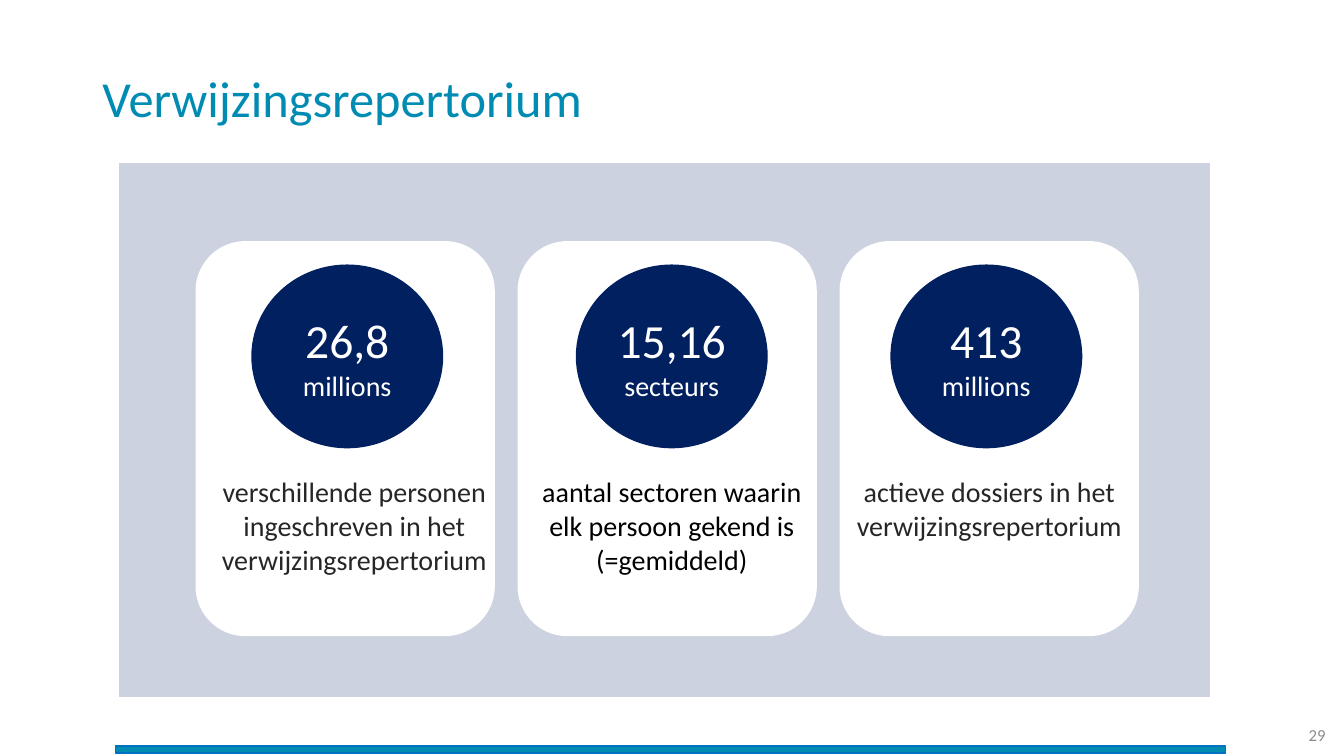
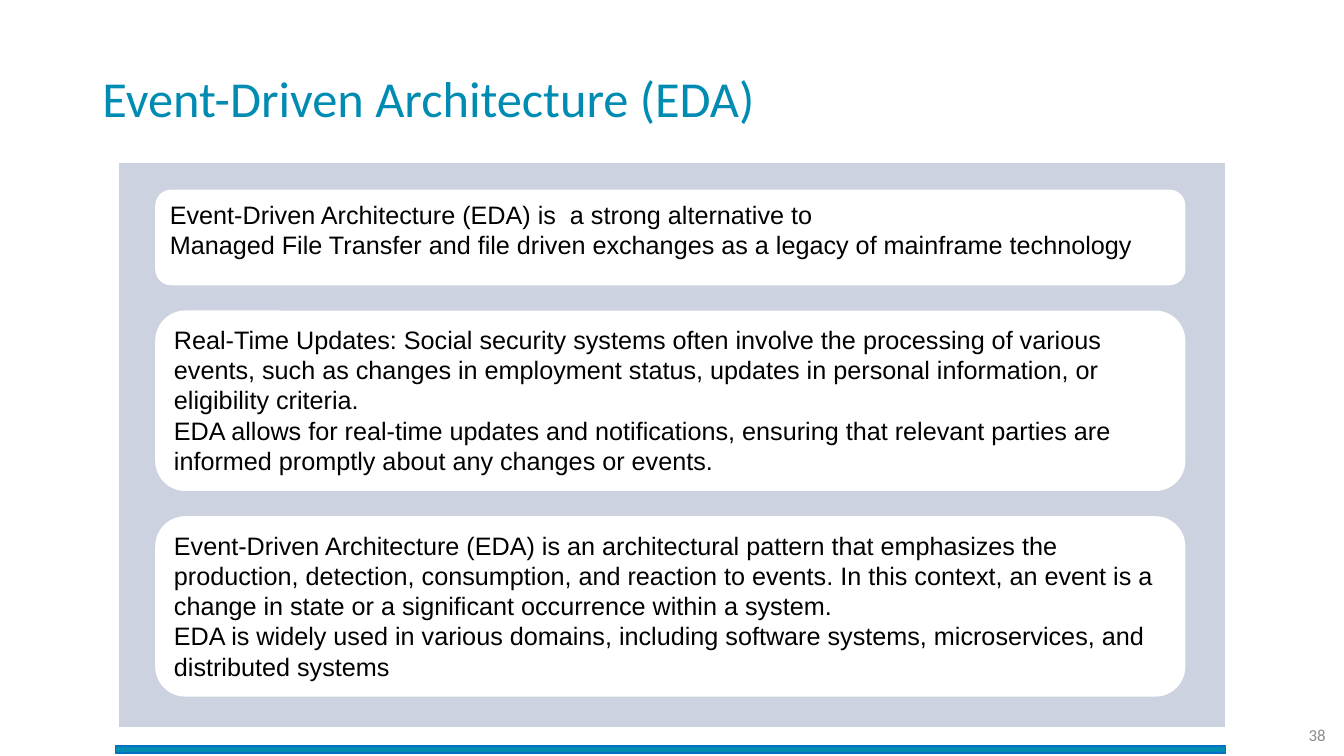
"""Build two slides: repertory key figures and event-driven architecture."""
from dataclasses import dataclass
from itertools import cycle

from lxml.etree import SubElement
from pptx import Presentation
from pptx.dml.color import RGBColor
from pptx.enum.shapes import MSO_SHAPE as Preset
from pptx.enum.text import MSO_ANCHOR as Anchor, MSO_AUTO_SIZE as AutoSize, PP_ALIGN as Align
from pptx.oxml.ns import qn
from pptx.util import Pt

FIGURES_TITLE = "Verwijzingsrepertorium"
FIGURES = [
    {"value": "26,8", "unit": "millions", "circle_left": 180, "color": "262626",
     "caption": "verschillende personen ingeschreven in het verwijzingsrepertorium"},
    {"value": "15,16", "unit": "secteurs", "circle_left": 411.8, "color": "000000",
     "caption": "aantal sectoren waarin elk persoon gekend is (=gemiddeld)"},
    {"value": "413", "unit": "millions", "circle_left": 636.5, "color": "262626",
     "caption": "actieve dossiers in het verwijzingsrepertorium"},
]

EVENTS_TITLE = "Event-Driven Architecture (EDA)"
EVENT_BOXES = [
    (68.4, ["Event-Driven Architecture (EDA) is  a strong alternative to",
            "Managed File Transfer and file driven exchanges as a legacy of mainframe technology"]),
    (128.9, ["Real-Time Updates: Social security systems often involve the processing of various "
             "events, such as changes in employment status, updates in personal information, or "
             "eligibility criteria.",
             "EDA allows for real-time updates and notifications, ensuring that relevant parties "
             "are informed promptly about any changes or events."]),
    (128.9, ["Event-Driven Architecture (EDA) is an architectural pattern that emphasizes the "
             "production, detection, consumption, and reaction to events. In this context, an "
             "event is a change in state or a significant occurrence within a system.",
             "EDA is widely used in various domains, including software systems, microservices, "
             "and distributed systems"]),
]


@dataclass(frozen=True)
class Theme:
    """Colours, fonts and type sizes of the deck."""
    teal: str = "008CB2"
    blue: str = "0070C0"
    navy: str = "002060"
    white: str = "FFFFFF"
    black: str = "000000"
    gray: str = "8C8C8C"
    font: str = "Calibri"
    body_font: str = "Arial"
    title_size: float = 36
    value_size: float = 34
    caption_size: float = 20
    body_size: float = 18
    number_size: float = 12


THEME = Theme()
NO_GRID_STYLE = "{2D5ABB26-0587-4C30-8999-92F81FD0307C}"


def points(*lengths):
    """Convert numbers to lengths in points."""
    return [Pt(length) for length in lengths]


def write(frame, *lines, sizes, color, font=THEME.font, align=Align.LEFT,
          anchor=Anchor.MIDDLE, spacing=None):
    """Fill a text frame or cell frame with one paragraph per line."""
    frame.word_wrap = True
    frame.vertical_anchor = anchor
    for index, (line, size) in enumerate(zip(lines, cycle(sizes))):
        paragraph = frame.add_paragraph() if index else frame.paragraphs[0]
        paragraph.alignment = align
        paragraph.line_spacing = spacing
        run = paragraph.add_run()
        run.text = line
        run.font.name = font
        run.font.size = Pt(size)
        run.font.color.rgb = RGBColor.from_string(color)


def add_block(slide, preset, box, fill, line=None, opacity=None):
    """Add a flat preset shape with an optional outline and opacity."""
    shape = slide.shapes.add_shape(preset, *points(*box))
    shape.shadow.inherit = False
    shape.fill.solid()
    shape.fill.fore_color.rgb = RGBColor.from_string(fill)
    if opacity is not None:
        color = shape.element.spPr.find(qn("a:solidFill")).find(qn("a:srgbClr"))
        SubElement(color, qn("a:alpha")).set("val", str(opacity * 1000))
    if line:
        shape.line.color.rgb = RGBColor.from_string(line)
        shape.line.width = Pt(1)
    else:
        shape.line.fill.background()
    return shape


def add_slide(presentation, title, number, panel_size):
    """Add a slide with its title, page number, bottom band and tinted panel."""
    slide = presentation.slides.add_slide(presentation.slide_layouts[5])
    heading = slide.shapes.title
    heading.left, heading.top, heading.width, heading.height = points(66, 20, 828, 104.4)
    heading.text_frame.auto_size = AutoSize.NONE
    write(heading.text_frame, title, sizes=[THEME.title_size], color=THEME.teal, spacing=0.9)
    page = slide.shapes.add_textbox(*points(895, 510.5, 59, 28.8))
    write(page.text_frame, str(number), sizes=[THEME.number_size], color=THEME.gray,
          align=Align.RIGHT)
    add_block(slide, Preset.RECTANGLE, (82.4, 533, 793.2, 5), THEME.teal, line=THEME.blue)
    add_block(slide, Preset.RECTANGLE, (84.4, 116.2, *panel_size), THEME.navy,
              line=THEME.white, opacity=20)
    return slide


def add_captions(slide):
    """Add the borderless table of captions below the circles."""
    frame = slide.shapes.add_table(1, len(FIGURES), *points(139.7, 314, 680.4, 203.8))
    table = frame.table
    table.first_row = table.horz_banding = False
    next(frame.element.iter(qn("a:tableStyleId"))).text = NO_GRID_STYLE
    for cell, figure in zip(table.rows[0].cells, FIGURES):
        cell.fill.background()
        cell.margin_top = Pt(25.6)
        cell.vertical_anchor = Anchor.TOP
        write(cell.text_frame, figure["caption"], sizes=[THEME.caption_size],
              color=figure["color"], align=Align.CENTER, anchor=None)


def build_figures(presentation):
    """Build the slide with three key figures."""
    slide = add_slide(presentation, FIGURES_TITLE, 29, (780.5, 382.3))
    card_left, card_pitch = 139.7, 230
    for index, figure in enumerate(FIGURES):
        add_block(slide, Preset.ROUNDED_RECTANGLE,
                  (card_left + index * card_pitch, 172.2, 213.8, 282.2), THEME.white)
        circle = add_block(slide, Preset.FLOWCHART_CONNECTOR,
                           (figure["circle_left"], 189.4, 136.1, 130.3),
                           THEME.navy, line=THEME.navy)
        write(circle.text_frame, figure["value"], figure["unit"],
              sizes=[THEME.value_size, THEME.caption_size], color=THEME.white,
              align=Align.CENTER)
    add_captions(slide)


def build_events(presentation):
    """Build the slide with three stacked text boxes."""
    slide = add_slide(presentation, EVENTS_TITLE, 38, (791.3, 403.9))
    top, gap = 135.4, 18
    for height, lines in EVENT_BOXES:
        box = add_block(slide, Preset.ROUNDED_RECTANGLE, (110.9, top, 735.8, height), THEME.white)
        write(box.text_frame, *lines, sizes=[THEME.body_size], color=THEME.black,
              font=THEME.body_font, anchor=Anchor.TOP)
        top += height + gap


def main():
    """Create and save the presentation."""
    presentation = Presentation()
    presentation.slide_width, presentation.slide_height = points(960, 540)
    build_figures(presentation)
    build_events(presentation)
    presentation.save("out.pptx")


if __name__ == "__main__":
    main()
